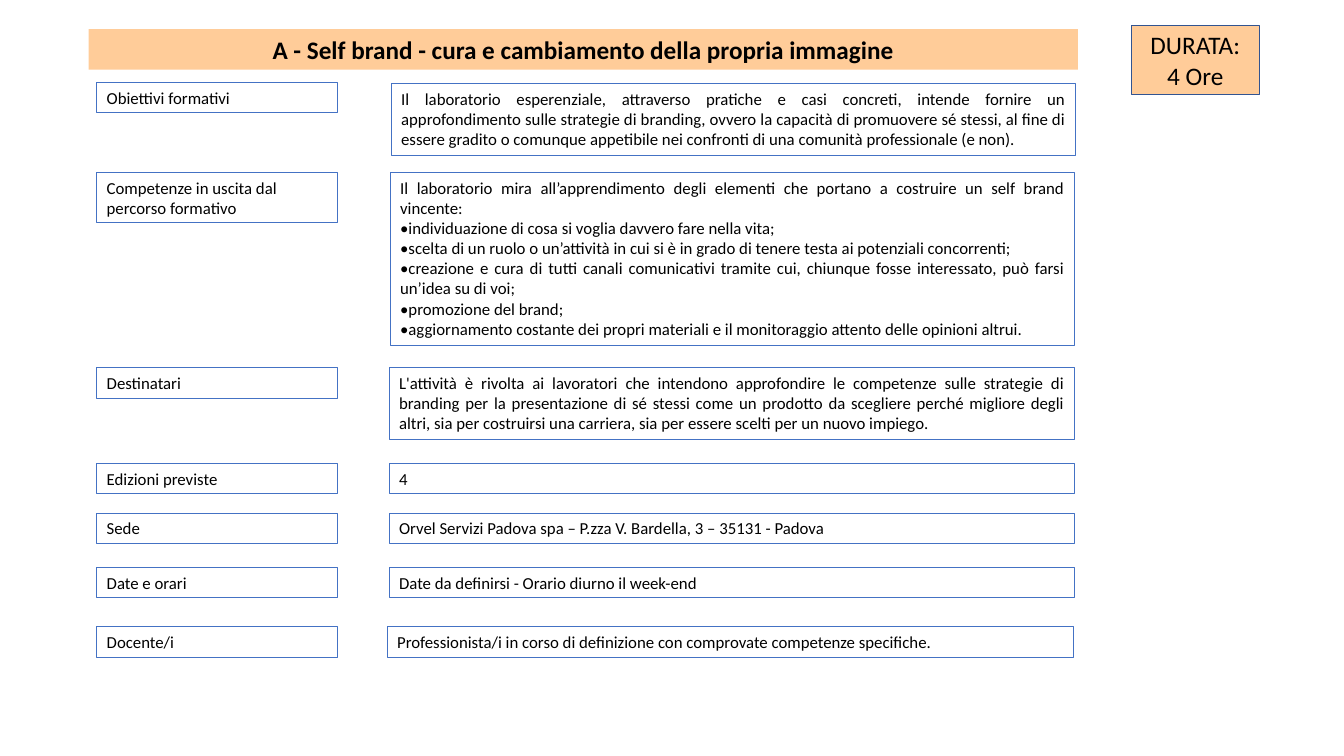
from pptx import Presentation
from pptx.dml.color import RGBColor
from pptx.enum.shapes import MSO_SHAPE
from pptx.enum.text import MSO_ANCHOR, MSO_AUTO_SIZE, PP_ALIGN
from pptx.util import Inches, Pt

RECT = MSO_SHAPE.RECTANGLE
TOP, MIDDLE = MSO_ANCHOR.TOP, MSO_ANCHOR.MIDDLE
GROW, FIXED = MSO_AUTO_SIZE.SHAPE_TO_FIT_TEXT, MSO_AUTO_SIZE.NONE
LEFT, CENTER, JUSTIFY = PP_ALIGN.LEFT, PP_ALIGN.CENTER, PP_ALIGN.JUSTIFY
TITLE_ONLY = 5

FONT = "Calibri"
BLACK, PEACH, BLUE, DARK_BLUE = "000000", "FFCC99", "4472C4", "325491"
LABEL_LEFT, LABEL_WIDTH, LINE_HEIGHT = 0.96, 2.39, 0.3

# label, label height, top, (left, top, width, height) of the content, alignment, paragraphs
ROWS = [
    ("Obiettivi formativi", LINE_HEIGHT, 0.82, (3.88, 0.83, 6.79, 0.71), JUSTIFY, [
        "Il laboratorio esperenziale, attraverso pratiche e casi concreti, intende fornire un "
        "approfondimento sulle strategie di branding, ovvero la capacità di promuovere sé stessi, "
        "al fine di essere gradito o comunque appetibile nei confronti di una comunità "
        "professionale (e non)."]),
    ("Competenze in uscita dal percorso formativo", 0.5, 1.71, (3.87, 1.71, 6.79, 1.72), JUSTIFY, [
        "Il laboratorio mira all’apprendimento degli elementi che portano a costruire un self "
        "brand vincente:",
        "•individuazione di cosa si voglia davvero fare nella vita;",
        "•scelta di un ruolo o un’attività in cui si è in grado di tenere testa ai potenziali "
        "concorrenti;",
        "•creazione e cura di tutti canali comunicativi tramite cui, chiunque fosse interessato, "
        "può farsi un’idea su di voi;",
        "•promozione del brand;",
        "•aggiornamento costante dei propri materiali e il monitoraggio attento delle opinioni "
        "altrui."]),
    ("Destinatari", LINE_HEIGHT, 3.65, (3.86, 3.65, 6.8, 0.71), JUSTIFY, [
        "L'attività è rivolta ai lavoratori che intendono approfondire le competenze sulle "
        "strategie di branding per la presentazione di sé stessi come un prodotto da scegliere "
        "perché migliore degli altri, sia per costruirsi una carriera, sia per essere scelti per "
        "un nuovo impiego."]),
    ("Edizioni previste", LINE_HEIGHT, 4.6, (3.86, 4.6, 6.8, LINE_HEIGHT), JUSTIFY, ["4"]),
    ("Sede", LINE_HEIGHT, 5.09, (3.86, 5.09, 6.8, LINE_HEIGHT), LEFT,
     ["Orvel Servizi Padova spa – P.zza V. Bardella, 3 – 35131 - Padova"]),
    ("Date e orari", LINE_HEIGHT, 5.63, (3.86, 5.63, 6.8, LINE_HEIGHT), LEFT,
     ["Date da definirsi - Orario diurno il week-end"]),
    ("Docente/i", LINE_HEIGHT, 6.22, (3.84, 6.22, 6.81, LINE_HEIGHT), LEFT,
     ["Professionista/i in corso di definizione con comprovate competenze specifiche."]),
]


def rgb(color):
    return RGBColor.from_string(color)


def fill_solid(sp, color):
    sp.fill.solid()
    sp.fill.fore_color.rgb = rgb(color)


def write(sp, paragraphs, size, align, bold=False, anchor=TOP, auto_size=GROW):
    tf = sp.text_frame
    tf.text = "\n".join(paragraphs)
    tf.word_wrap = True
    tf.auto_size = auto_size
    tf.vertical_anchor = anchor
    for p in tf.paragraphs:
        p.alignment = align
        for r in p.runs:
            r.font.name = FONT
            r.font.size = Pt(size)
            r.font.bold = bold
            r.font.color.rgb = rgb(BLACK)


def add_box(slide, box, line_color, line_width, fill=None):
    sp = slide.shapes.add_shape(RECT, *map(Inches, box))
    sp.shadow.inherit = False
    sp.line.color.rgb = rgb(line_color)
    sp.line.width = Pt(line_width)
    if fill:
        fill_solid(sp, fill)
    else:
        sp.fill.background()
    return sp


def set_title(slide, text, box):
    title = slide.shapes.title
    title.left, title.top, title.width, title.height = map(Inches, box)
    fill_solid(title, PEACH)
    write(title, [text], 18, CENTER, bold=True, auto_size=FIXED)


def add_row(slide, label, label_height, top, content_box, align, paragraphs):
    label_box = (LABEL_LEFT, top, LABEL_WIDTH, label_height)
    write(add_box(slide, label_box, BLUE, 0.75), [label], 12, LEFT)
    write(add_box(slide, content_box, BLUE, 0.75), paragraphs, 12, align)


def main():
    prs = Presentation()
    prs.slide_width, prs.slide_height = Inches(13.33), Inches(7.5)
    slide = prs.slides.add_slide(prs.slide_layouts[TITLE_ONLY])

    set_title(slide, "A - Self brand - cura e cambiamento della propria immagine",
              (0.88, 0.29, 9.81, 0.4))
    for row in ROWS:
        add_row(slide, *row)
    duration = add_box(slide, (11.22, 0.25, 1.27, 0.69), DARK_BLUE, 1, PEACH)
    write(duration, ["DURATA:", "4 Ore"], 18, CENTER, anchor=MIDDLE, auto_size=FIXED)

    prs.save("out.pptx")


if __name__ == "__main__":
    main()
